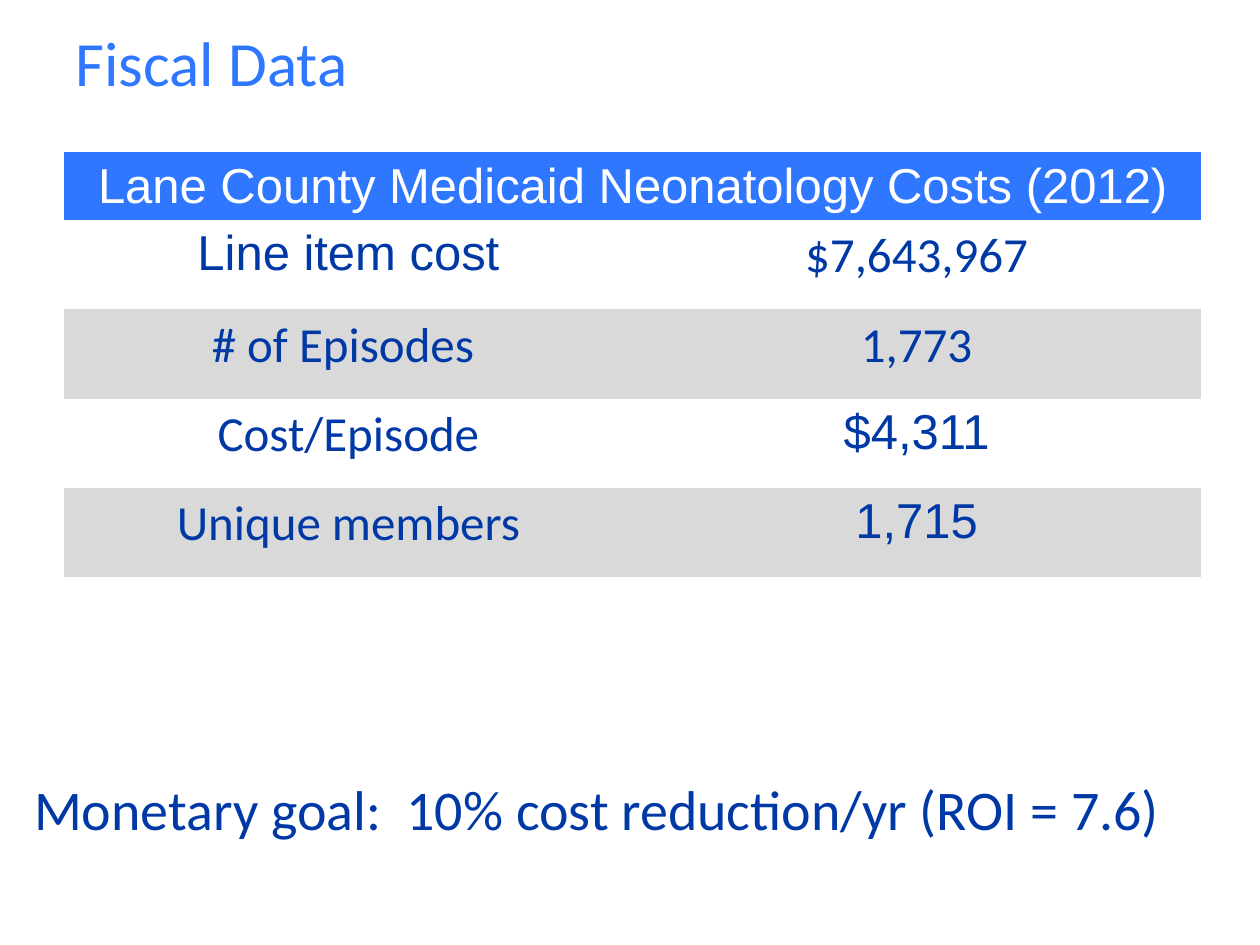
from pptx import Presentation
from pptx.dml.color import RGBColor
from pptx.enum import text
from pptx.util import Inches, Pt

TITLE = "Fiscal Data"
GOAL = "Monetary goal:  10% cost reduction/yr (ROI = 7.6)"
HEADER = "Lane County Medicaid Neonatology Costs (2012)"
ROWS = [
    (("Line item cost", "Arial"), ("$7,643,967", "Calibri")),
    (("# of Episodes ", "Calibri"), ("1,773", "Calibri")),
    (("Cost/Episode", "Calibri"), ("$4,311", "Arial")),
    (("Unique members", "Calibri"), ("1,715", "Arial")),
]
COLORS = {"blue": "3077FF", "navy": "0039A6", "white": "FFFFFF", "gray": "D9D9D9"}
NO_GRID_STYLE = "{2D5ABB26-0587-4C30-8999-92F81FD0307C}"
COL_W, HEADER_H, ROW_H = 4.51, 0.53, 0.71


def write(tf, content, size=28, font="Calibri", color="navy", align=text.PP_ALIGN.LEFT):
    tf.word_wrap = True
    p = tf.paragraphs[0]
    p.alignment = align
    p.space_before = Pt(0)
    r = p.add_run()
    r.text = content
    r.font.size = Pt(size)
    r.font.name = font
    r.font.bold = False
    r.font.color.rgb = RGBColor.from_string(COLORS[color])


def place(sp, left, top, width, height):
    sp.left, sp.top = Inches(left), Inches(top)
    sp.width, sp.height = Inches(width), Inches(height)
    sp.text_frame.auto_size = text.MSO_AUTO_SIZE.NONE
    sp.text_frame.vertical_anchor = text.MSO_ANCHOR.TOP


def fill_cell(cell, content, fill, **fmt):
    cell.fill.solid()
    cell.fill.fore_color.rgb = RGBColor.from_string(COLORS[fill])
    cell.vertical_anchor = text.MSO_ANCHOR.TOP
    write(cell.text_frame, content, align=text.PP_ALIGN.CENTER, **fmt)


def add_costs(s):
    height = HEADER_H + ROW_H * len(ROWS)
    frame = s.shapes.add_table(len(ROWS) + 1, 2, Inches(0.51), Inches(1.21),
                               Inches(2 * COL_W), Inches(height))
    table = frame.table
    table.first_row = table.horz_banding = False
    table._tbl.tblPr.find("{*}tableStyleId").text = NO_GRID_STYLE
    for col in table.columns:
        col.width = Inches(COL_W)
    for i, row in enumerate(table.rows):
        row.height = Inches(ROW_H if i else HEADER_H)
    table.cell(0, 0).merge(table.cell(0, 1))
    fill_cell(table.cell(0, 0), HEADER, "blue", font="Arial", color="white")
    for i, row in enumerate(ROWS, 1):
        for j, (content, font) in enumerate(row):
            fill_cell(table.cell(i, j), content, "white" if i % 2 else "gray", font=font)


def main():
    prs = Presentation()
    prs.slide_width, prs.slide_height = Inches(10), Inches(7.5)
    s = prs.slides.add_slide(prs.slide_layouts[0])
    title, goal = s.placeholders
    place(title, 0.5, 0.14, 8.95, 0.8)
    write(title.text_frame, TITLE, size=36, color="blue")
    place(goal, 0.17, 6.1, 9.67, 0.42)
    write(goal.text_frame, GOAL, size=32)
    add_costs(s)
    prs.save("out.pptx")


if __name__ == "__main__":
    main()
